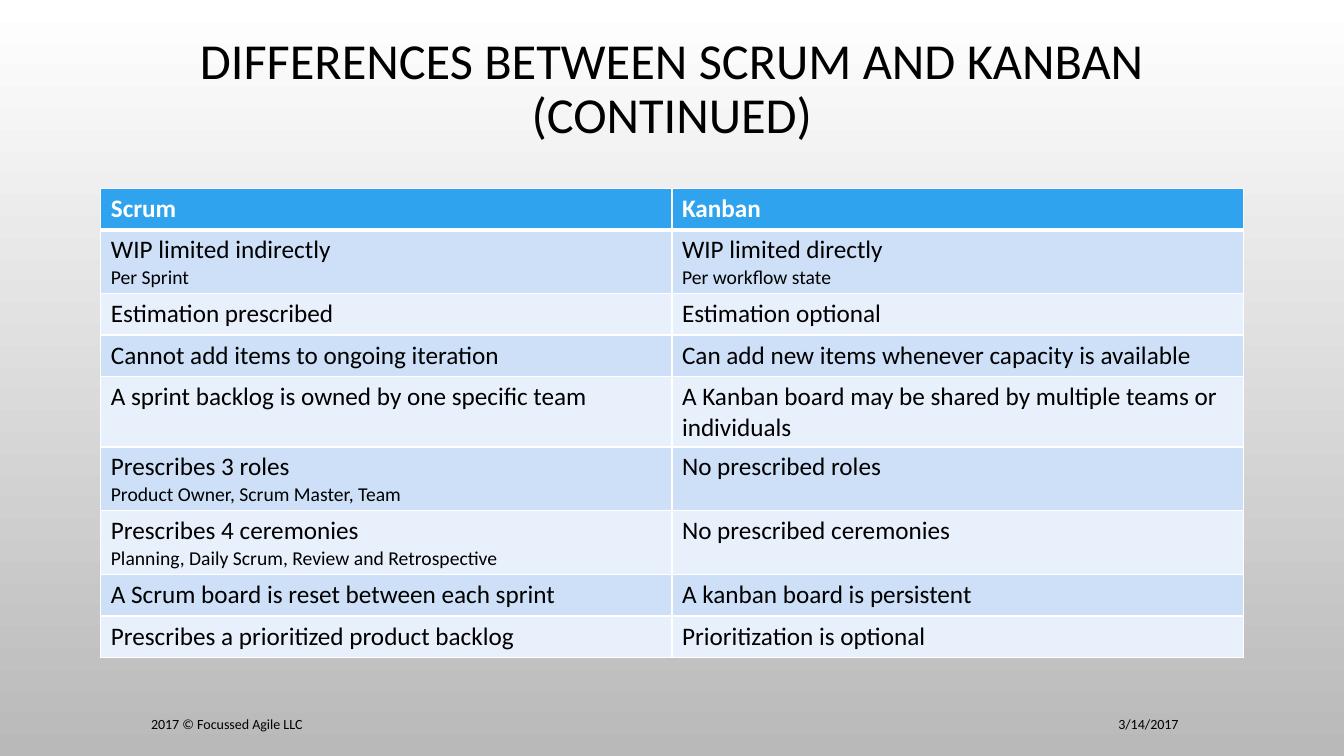
from lxml import etree
from pptx import Presentation
from pptx import util as u
from pptx.dml.color import RGBColor
from pptx.enum import text
from pptx.oxml.ns import qn


def colour(value):
    return RGBColor.from_string(value)


class SlideBuilder:
    """Holds the style and the current slide; lengths are grid columns and rows."""

    FONT, INK, WHITE = "Calibri", "000000", "FFFFFF"
    HEADER, BANDS = "2FA3EE", ("E8F0FC", "CDE0F8")
    BODY, DETAIL = 18, 14

    def __init__(self):
        self.deck = Presentation()
        self.deck.slide_width = u.Inches(13.333)
        self.deck.slide_height = u.Inches(7.5)
        self.column = self.deck.slide_width / 40
        self.row = self.deck.slide_height / 75
        self.page = self.deck.slides.add_slide(self.deck.slide_layouts[6])

    def place(self, left, top, width, height):
        return (round(left * self.column), round(top * self.row),
                round(width * self.column), round(height * self.row))

    def background(self, first, last):
        fill = self.page.background.fill
        fill.gradient()
        fill.gradient_angle = 270
        for stop, value in zip(fill.gradient_stops, (first, last)):
            stop.color.rgb = colour(value)

    def add_span(self, para, words, size, ink=INK, bold=False):
        span = para.add_run()
        span.text = words
        span.font.name = self.FONT
        span.font.size = u.Pt(size)
        span.font.bold = bold
        span.font.color.rgb = colour(ink)

    def add_text(self, area, words, size, align=text.PP_ALIGN.LEFT, spacing=1.0):
        box = self.page.shapes.add_textbox(*self.place(*area))
        frame = box.text_frame
        frame.word_wrap = True
        frame.vertical_anchor = text.MSO_ANCHOR.MIDDLE
        para = frame.paragraphs[0]
        para.alignment = align
        para.line_spacing = spacing
        self.add_span(para, words, size)

    def add_border(self, cell, side, points):
        properties = cell._tc.get_or_add_tcPr()
        line = etree.SubElement(properties, qn(f"a:ln{side}"), w=str(u.Pt(points)))
        fill = etree.SubElement(line, qn("a:solidFill"))
        etree.SubElement(fill, qn("a:srgbClr"), val=self.WHITE)

    def fill_cell(self, cell, lines, row_index):
        is_header = row_index == 0
        # Borders, with a heavier rule under the header
        top = 3 if row_index == 1 else 1
        bottom = 3 if is_header else 1
        for side, points in (("L", 1), ("R", 1), ("T", top), ("B", bottom)):
            self.add_border(cell, side, points)
        cell.fill.solid()
        cell.fill.fore_color.rgb = colour(
            self.HEADER if is_header else self.BANDS[row_index % 2])
        # Main line, then an optional smaller detail line
        for index, words in enumerate(lines):
            frame = cell.text_frame
            para = frame.add_paragraph() if index else frame.paragraphs[0]
            self.add_span(para, words, self.DETAIL if index else self.BODY,
                          self.WHITE if is_header else self.INK, is_header)

    def add_table(self, area, rows, row_height):
        place = self.place(*area)
        frame = self.page.shapes.add_table(len(rows), len(rows[0]), *place)
        table = frame.table
        for row_index, entries in enumerate(rows):
            table.rows[row_index].height = round(row_height * self.row)
            for column_index, lines in enumerate(entries):
                self.fill_cell(table.cell(row_index, column_index), lines, row_index)
        frame.height = place[3]


COMPARISON = [
    (["Scrum"], ["Kanban"]),
    (["WIP limited indirectly", "Per Sprint"],
     ["WIP limited directly", "Per workflow state"]),
    (["Estimation prescribed"], ["Estimation optional"]),
    (["Cannot add items to ongoing iteration"],
     ["Can add new items whenever capacity is available"]),
    (["A sprint backlog is owned by one specific team"],
     ["A Kanban board may be shared by multiple teams or individuals"]),
    (["Prescribes 3 roles", "Product Owner, Scrum Master, Team"],
     ["No prescribed roles"]),
    (["Prescribes 4 ceremonies", "Planning, Daily Scrum, Review and Retrospective"],
     ["No prescribed ceremonies"]),
    (["A Scrum board is reset between each sprint"], ["A kanban board is persistent"]),
    (["Prescribes a prioritized product backlog"], ["Prioritization is optional"]),
]


def main():
    slide = SlideBuilder()
    slide.background("FFFFFF", "B9B9B9")

    # Title
    slide.add_text((3, 0.2, 34, 17.5),
                   "DIFFERENCES BETWEEN SCRUM AND KANBAN (CONTINUED)",
                   36, text.PP_ALIGN.CENTER, 0.9)

    # Comparison table
    slide.add_table((3, 18.7, 34, 46.3), COMPARISON, 4.1)

    # Footer
    slide.add_text((26.37, 69.8, 9, 4), "3/14/2017", 10, text.PP_ALIGN.RIGHT)
    slide.add_text((4.2, 69.8, 21.9, 4), "2017 © Focussed Agile LLC", 10)

    slide.deck.save("out.pptx")


if __name__ == "__main__":
    main()
